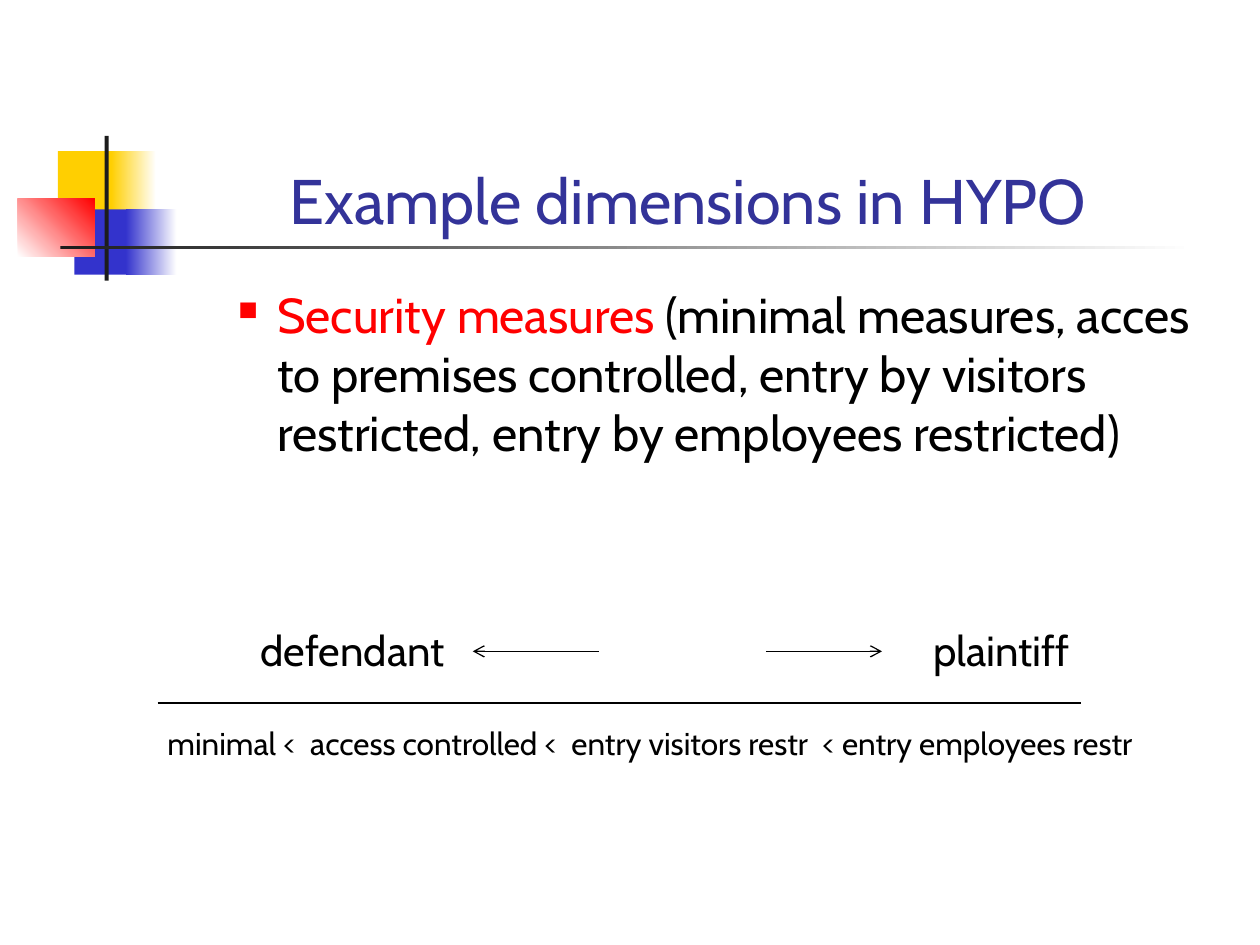
from lxml import etree
from pptx import Presentation
from pptx.dml.color import RGBColor
from pptx.enum.shapes import MSO_CONNECTOR, MSO_SHAPE
from pptx.enum.text import MSO_ANCHOR, MSO_AUTO_SIZE, PP_ALIGN
from pptx.oxml.ns import qn
from pptx.util import Cm, Pt

RECT, STRAIGHT = MSO_SHAPE.RECTANGLE, MSO_CONNECTOR.STRAIGHT
TOP, BOTTOM = MSO_ANCHOR.TOP, MSO_ANCHOR.BOTTOM
CENTER, LEFT = PP_ALIGN.CENTER, PP_ALIGN.LEFT
NO_AUTOFIT = MSO_AUTO_SIZE.NONE

FONT = "Cabin"
WHITE = RGBColor(0xFF, 0xFF, 0xFF)
BLACK = RGBColor(0, 0, 0)
DARK = RGBColor(0x1C, 0x1C, 0x1C)
YELLOW = RGBColor(0xFF, 0xCF, 0x01)
BLUE = RGBColor(0x33, 0x33, 0xCC)
RED = RGBColor(0xFF, 0, 0)
TITLE_BLUE = RGBColor(0x33, 0x33, 0x99)


def set_attrs(obj, **values):
    for name, value in values.items():
        setattr(obj, name, value)


def place(sp, x, y, w, h):
    set_attrs(sp, left=Cm(x), top=Cm(y), width=Cm(w), height=Cm(h))


def write(sp, runs, size, align=CENTER, anchor=TOP, wrap=True):
    """Fill the first paragraph with (text, colour) runs and return it."""
    tf = sp.text_frame
    set_attrs(tf, word_wrap=wrap, auto_size=NO_AUTOFIT, vertical_anchor=anchor)
    p = tf.paragraphs[0]
    p.alignment = align
    for text, color in runs:
        r = p.add_run()
        r.text = text
        set_attrs(r.font, name=FONT, size=Pt(size))
        r.font.color.rgb = color
    return p


def add_text(slide, box, runs, size, **options):
    sp = slide.shapes.add_textbox(*map(Cm, box))
    return write(sp, runs, size, **options)


def add_block(slide, box, start, end=None, angle=0):
    """Add a borderless rectangle, fading from start to end if end is given."""
    sp = slide.shapes.add_shape(RECT, *map(Cm, box))
    sp.shadow.inherit = False
    sp.line.fill.background()
    if end is None:
        sp.fill.solid()
        sp.fill.fore_color.rgb = start
        return
    sp.fill.gradient()
    sp.fill.gradient_angle = angle
    for stop, position, color in zip(sp.fill.gradient_stops, (0, 1), (start, end)):
        stop.position = position
        stop.color.rgb = color


def add_line(slide, x1, x2, y, arrow=False):
    cn = slide.shapes.add_connector(STRAIGHT, Cm(x1), Cm(y), Cm(x2), Cm(y))
    cn.line.color.rgb = BLACK
    cn.line.width = Pt(0.75)
    if arrow:
        ln = cn.line._get_or_add_ln()
        etree.SubElement(ln, qn("a:tailEnd"), type="arrow")
    etree.SubElement(cn._element.spPr, qn("a:effectLst"))


def add_ornament(slide, x, y):
    blocks = [
        ((0.81, 0.31, 1.22, 1.32), YELLOW),
        ((1.88, 0.31, 0.91, 1.32), YELLOW, WHITE),
        ((1.14, 1.48, 1.17, 1.32), BLUE),
        ((2.18, 1.48, 1.02, 1.32), BLUE, WHITE),
        ((0, 1.27, 1.55, 1.17), WHITE, RED, 45),
        ((1.75, 0, 0.08, 2.92), DARK),
        ((0.86, 2.21, 22.86, 0.08), DARK, WHITE),
    ]
    for (dx, dy, w, h), *fill in blocks:
        add_block(slide, (x + dx, y + dy, w, h), *fill)


def add_title(slide, box):
    title = slide.shapes.title
    place(title, *box)
    write(title, [("Example dimensions in HYPO", TITLE_BLUE)], 36, anchor=BOTTOM)


def add_bullet(slide, box):
    p = add_text(slide, box, [
        ("Security measures ", RED),
        ("(minimal measures, acces to premises controlled, "
         "entry by visitors restricted, entry by employees restricted)", BLACK),
    ], 28, align=LEFT)
    pPr = p._p.get_or_add_pPr()
    pPr.set("marL", str(Cm(2.06)))
    pPr.set("indent", str(Cm(-0.79)))
    color = etree.SubElement(pPr, qn("a:buClr"))
    etree.SubElement(color, qn("a:srgbClr"), val=str(RED))
    etree.SubElement(pPr, qn("a:buSzPct"), val="55000")
    etree.SubElement(pPr, qn("a:buChar"), char="■")


def add_scale(slide, x, y, w):
    """Draw the axis between the two parties, its arrows and its ordered values."""
    add_line(slide, x, x + w, y + 1.7)
    for start, end in ((8.89, 6.35), (12.26, 14.6)):
        add_line(slide, x + start, x + end, y + 0.66, arrow=True)
    for party, dx, width in (("defendant", 1.77, 4.32), ("plaintiff", 15.34, 3.33)):
        add_text(slide, (x + dx, y, width, 1.3), [(party, BLACK)], 24, wrap=False)
    values = "minimal <  access controlled <  entry visitors restr  < entry employees restr"
    add_text(slide, (x - 2.37, y + 2.01, 24.59, 1.12), [(values, BLACK)], 18)


def main():
    prs = Presentation()
    set_attrs(prs, slide_width=Cm(25.4), slide_height=Cm(19.05))
    slide = prs.slides.add_slide(prs.slide_layouts[5])
    add_ornament(slide, 0.36, 2.74)
    add_title(slide, (2.34, 1.73, 23.06, 3.18))
    add_bullet(slide, (3.28, 5.61, 21.59, 11.43))
    add_scale(slide, 3.18, 12.47, 18.62)
    prs.save("out.pptx")


if __name__ == "__main__":
    main()
